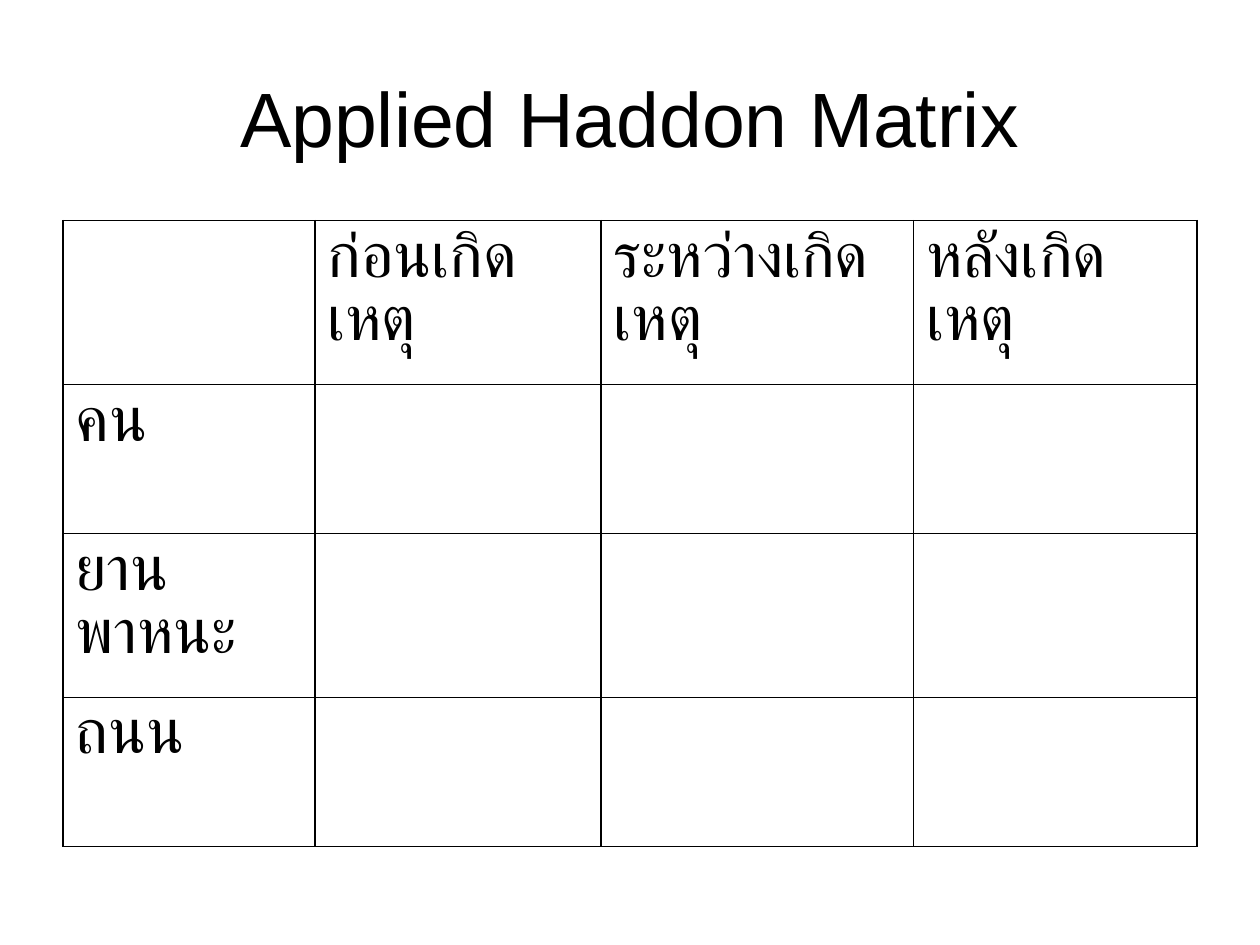
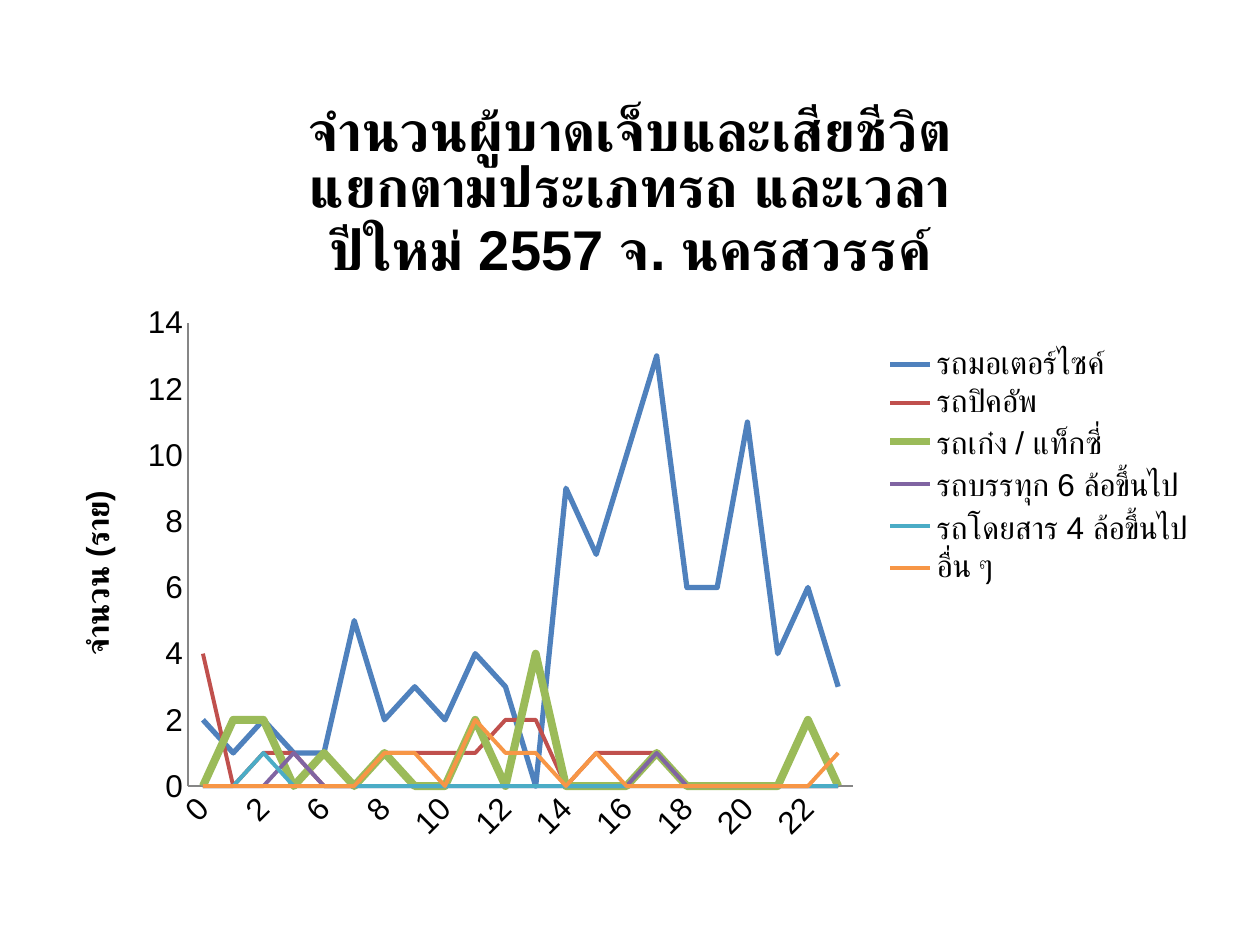
from typing import Any, NamedTuple

from lxml import etree
from pptx import Presentation
from pptx.chart.data import CategoryChartData
from pptx.dml.color import RGBColor
from pptx.enum.chart import XL_CHART_TYPE, XL_LEGEND_POSITION, XL_TICK_MARK
from pptx.enum.text import MSO_ANCHOR, PP_ALIGN
from pptx.oxml.ns import qn
from pptx.util import Pt

LINE_CHART = XL_CHART_TYPE.LINE
RIGHT = XL_LEGEND_POSITION.RIGHT
NO_TICK = XL_TICK_MARK.NONE
MIDDLE = MSO_ANCHOR.MIDDLE
CENTER = PP_ALIGN.CENTER

BLACK = RGBColor(0x00, 0x00, 0x00)
GREY = RGBColor(0x86, 0x86, 0x86)
BLUE = RGBColor(0x4F, 0x81, 0xBD)
RED = RGBColor(0xC0, 0x50, 0x4D)
GREEN = RGBColor(0x9B, 0xBB, 0x59)
PURPLE = RGBColor(0x80, 0x64, 0xA2)
TEAL = RGBColor(0x4B, 0xAC, 0xC6)
ORANGE = RGBColor(0xF7, 0x96, 0x46)
FACE = "Arial"


class Box(NamedTuple):
    left: float
    top: float
    width: float
    height: float

    def points(self) -> list[Pt]:
        return [Pt(side) for side in self]


class Trend(NamedTuple):
    name: str
    color: RGBColor
    weight: float
    counts: list[int]


# Haddon matrix
HEADS = ["", "ก่อนเกิดเหตุ", "ระหว่างเกิดเหตุ", "หลังเกิดเหตุ"]
FACTORS = ["คน", "ยานพาหนะ", "ถนน"]
WIDTHS = [144, 163.5, 178.5, 162]
ROW_HIGH = 85.2

# Casualties by vehicle and hour
HOURS = [hour for hour in range(24) if hour not in (4, 5)]
CAPTION = ["จำนวนผู้บาดเจ็บและเสียชีวิต", "แยกตามประเภทรถ และเวลา",
           "ปีใหม่ 2557 จ. นครสวรรค์"]
TRENDS = [
    Trend("รถมอเตอร์ไซค์", BLUE, 3,
          [2, 1, 2, 1, 1, 5, 2, 3, 2, 4, 3, 0, 9, 7, 10, 13, 6, 6, 11, 4, 6, 3]),
    Trend("รถปิคอัพ", RED, 2.25,
          [4, 0, 1, 1, 0, 0, 1, 1, 1, 1, 2, 2, 0, 1, 1, 1, 0, 0, 0, 0, 0, 0]),
    Trend("รถเก๋ง / แท็กซี่", GREEN, 4.5,
          [0, 2, 2, 0, 1, 0, 1, 0, 0, 2, 0, 4, 0, 0, 0, 1, 0, 0, 0, 0, 2, 0]),
    Trend("รถบรรทุก 6 ล้อขึ้นไป", PURPLE, 2.25,
          [0, 0, 0, 1, 0, 0, 0, 0, 0, 0, 0, 0, 0, 0, 0, 1, 0, 0, 0, 0, 0, 0]),
    Trend("รถโดยสาร 4 ล้อขึ้นไป", TEAL, 2.25,
          [0, 0, 1, 0, 0, 0, 0, 0, 0, 0, 0, 0, 0, 0, 0, 0, 0, 0, 0, 0, 0, 0]),
    Trend("อื่น ๆ", ORANGE, 2.25,
          [0, 0, 0, 0, 0, 0, 1, 1, 0, 2, 1, 1, 0, 1, 0, 0, 0, 0, 0, 0, 0, 1]),
]


def apply(target: Any, values: dict[str, Any]) -> None:
    for name, value in values.items():
        setattr(target, name, value)


def style(font: Any, size: float, bold: bool = False) -> None:
    apply(font, {"name": FACE, "size": Pt(size), "bold": bold})
    font.color.rgb = BLACK


def stroke(line: Any, color: RGBColor, weight: float) -> None:
    line.color.rgb = color
    line.width = Pt(weight)


def write(frame: Any, lines: list[str], size: float, bold: bool = False) -> None:
    for index, text in enumerate(lines):
        para = frame.paragraphs[0] if index == 0 else frame.add_paragraph()
        run = para.add_run()
        run.text = text
        style(run.font, size, bold)


def add_title(slide: Any, text: str) -> None:
    frame = slide.shapes.add_textbox(*Box(36, 21.6, 648, 90).points()).text_frame
    apply(frame, {"word_wrap": True, "vertical_anchor": MIDDLE})
    write(frame, [text], 44)
    frame.paragraphs[0].alignment = CENTER


def edge(cell: Any) -> None:
    """Rule all four sides of a cell."""
    props = cell._tc.get_or_add_tcPr()
    for index, side in enumerate(("lnL", "lnR", "lnT", "lnB")):
        line = etree.Element(qn(f"a:{side}"), w=str(Pt(1)))
        fill = etree.SubElement(line, qn("a:solidFill"))
        etree.SubElement(fill, qn("a:srgbClr"), val=str(BLACK))
        props.insert(index, line)


def add_matrix(slide: Any) -> None:
    rows = [HEADS] + [[name] + [""] * (len(HEADS) - 1) for name in FACTORS]
    box = Box(36, 126, sum(WIDTHS), ROW_HIGH * len(rows))
    table = slide.shapes.add_table(len(rows), len(HEADS), *box.points()).table
    apply(table, {"first_row": False, "horz_banding": False})
    for column, width in zip(table.columns, WIDTHS):
        column.width = Pt(width)
    for row, texts in zip(table.rows, rows):
        row.height = Pt(ROW_HIGH)
        for cell, text in zip(row.cells, texts):
            cell.fill.background()
            edge(cell)
            if text:
                write(cell.text_frame, [text], 36)


def layout(area: Box, inner: bool = False) -> Any:
    """Manual layout, as shares of the chart area."""
    node = etree.Element(qn("c:layout"))
    manual = etree.SubElement(node, qn("c:manualLayout"))
    values = {"layoutTarget": "inner"} if inner else {}
    values |= {"xMode": "edge", "yMode": "edge"}
    values |= dict(zip("xywh", area))
    for name, value in values.items():
        etree.SubElement(manual, qn(f"c:{name}"), val=str(value))
    return node


def drop_layout(node: Any) -> None:
    for old in node.findall(qn("c:layout")):
        node.remove(old)


def add_trends(slide: Any) -> None:
    data = CategoryChartData()
    data.categories = [str(hour) for hour in HOURS]
    for trend in TRENDS:
        data.add_series(trend.name, trend.counts)
    box = Box(31, 44.6, 658, 444.2)
    chart = slide.shapes.add_chart(LINE_CHART, *box.points(), data).chart
    style(chart.font, 18)
    chart.plots[0].vary_by_categories = False
    for series, trend in zip(chart.plots[0].series, TRENDS):
        series.smooth = False
        stroke(series.format.line, trend.color, trend.weight)

    # Caption
    chart.has_title = True
    chart.chart_title.include_in_layout = False
    write(chart.chart_title.text_frame, CAPTION, 32, True)

    # Axes
    for axis in (chart.category_axis, chart.value_axis):
        apply(axis, {"major_tick_mark": NO_TICK, "minor_tick_mark": NO_TICK,
                     "has_major_gridlines": False})
        stroke(axis.format.line, GREY, 0.75)
        style(axis.tick_labels.font, 18)
    apply(chart.value_axis, {"minimum_scale": 0, "maximum_scale": 14,
                             "major_unit": 2, "has_title": True})
    write(chart.value_axis.axis_title.text_frame, ["จำนวน (ราย)"], 18, True)
    hours = chart.category_axis._element
    hours.find(qn("c:txPr")).find(qn("a:bodyPr")).set("rot", "-2700000")
    skip = etree.Element(qn("c:tickLblSkip"), val="2")
    hours.find(qn("c:noMultiLvlLbl")).addprevious(skip)

    # Legend and plot area
    chart.has_legend = True
    apply(chart.legend, {"position": RIGHT, "include_in_layout": False})
    style(chart.legend.font, 18)
    legend = chart.legend._element
    drop_layout(legend)
    legend.find(qn("c:legendPos")).addnext(layout(Box(0.72, 0.34, 0.27, 0.32)))
    plot = chart._chartSpace.chart.plotArea
    drop_layout(plot)
    plot.insert(0, layout(Box(0.116, 0.315, 0.578, 0.596), inner=True))


def main() -> None:
    deck = Presentation()
    apply(deck, {"slide_width": Pt(720), "slide_height": Pt(540)})
    blank = deck.slide_layouts[6]
    first = deck.slides.add_slide(blank)
    add_title(first, "Applied Haddon Matrix")
    add_matrix(first)
    add_trends(deck.slides.add_slide(blank))
    deck.save("out.pptx")


if __name__ == "__main__":
    main()
